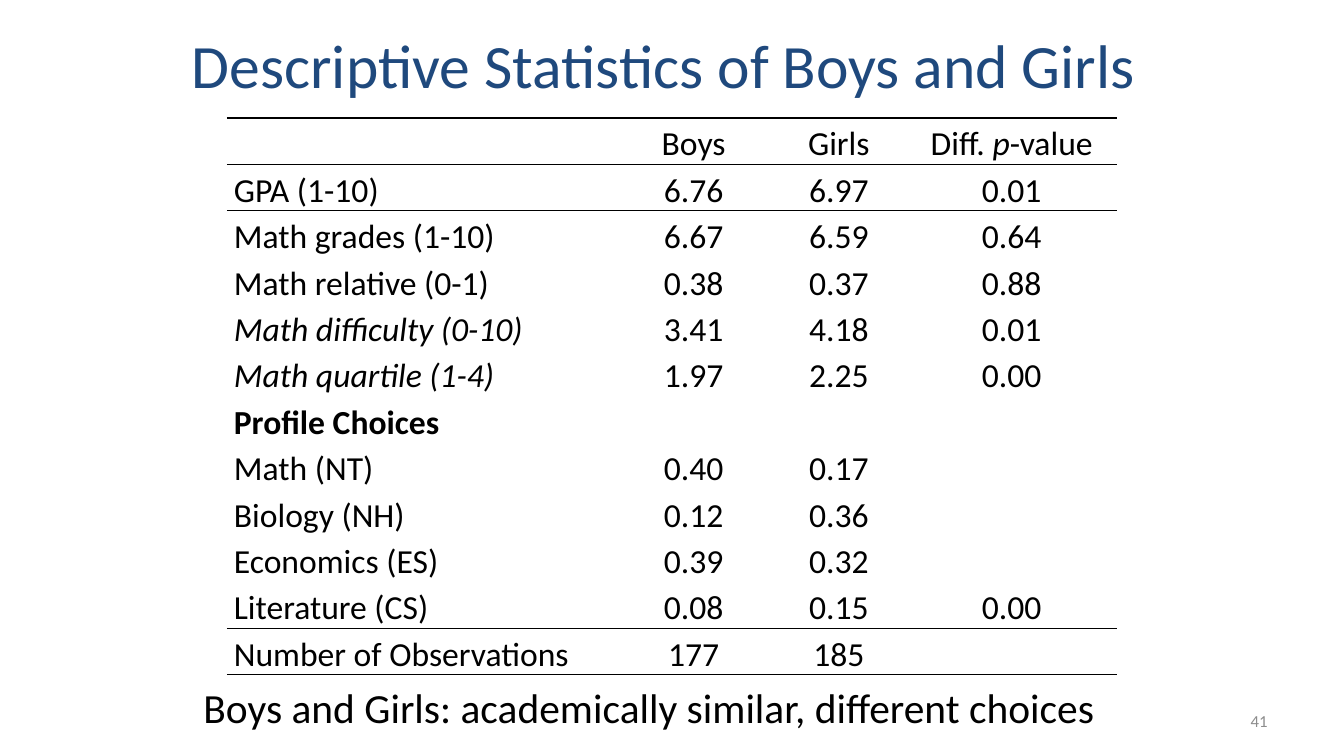
from lxml.etree import SubElement as Sub
from pptx import Presentation
from pptx.dml.color import RGBColor
from pptx.enum.text import MSO_ANCHOR as Anchor, PP_ALIGN as Align
from pptx.oxml.ns import qn
from pptx.util import Inches, Pt

NAVY = RGBColor(0x1F, 0x49, 0x7D)
BLACK = RGBColor(0, 0, 0)
GREY = RGBColor(0x8C, 0x8C, 0x8C)
PLAIN = "{2D5ABB26-0587-4C30-8999-92F81FD0307C}"  # style without grid

deck = Presentation()
deck.slide_width, deck.slide_height = Inches(13.33), Inches(7.5)
slide = deck.slides.add_slide(deck.slide_layouts[6])


def write(frame, text, size=24, color=BLACK, align=Align.LEFT, bold=False,
          slant="", line=None):
    """Fill a frame; the part of the text equal to slant is set in italics."""
    para = frame.paragraphs[0]
    para.alignment = align
    if line:
        para.line_spacing = line
    head, mid, tail = text.partition(slant) if slant else (text, "", "")
    for part in (head, mid, tail):
        if part:
            run = para.add_run()
            run.text = part
            font = run.font
            font.name, font.size, font.bold = "Calibri", Pt(size), bold
            font.italic = part == slant
            font.color.rgb = color


def rule(cell, side):
    """Draw a thin black line on one side of a cell."""
    edge = Sub(cell._tc.get_or_add_tcPr(), qn("a:" + side), w="12700")
    fill = Sub(edge, qn("a:solidFill"))
    Sub(fill, qn("a:srgbClr"), val=str(BLACK))


# Title, closing line and page number
texts = [
    ((1.75, 0.01, 9.67, 1.25), Anchor.MIDDLE,
     "Descriptive Statistics of Boys and Girls",
     dict(size=44, color=NAVY, align=Align.CENTER)),
    ((1.92, 6.72, 9.5, 0.75), Anchor.TOP,
     "Boys and Girls: academically similar, different choices",
     dict(size=29.6)),
    ((9.56, 6.95, 3.11, 0.4), Anchor.MIDDLE, "41",
     dict(size=12, color=GREY, align=Align.RIGHT)),
]
for place, anchor, text, style in texts:
    box = slide.shapes.add_textbox(*map(Inches, place))
    frame = box.text_frame
    frame.word_wrap = True
    frame.vertical_anchor = anchor
    write(frame, text, **style)

# Table of statistics
rows = [
    ("", "Boys", "Girls", "Diff. p-value"),
    ("GPA (1-10)", "6.76", "6.97", "0.01"),
    ("Math grades (1-10)", "6.67", "6.59", "0.64"),
    ("Math relative (0-1)", "0.38", "0.37", "0.88"),
    ("Math difficulty (0-10)", "3.41", "4.18", "0.01"),
    ("Math quartile (1-4)", "1.97", "2.25", "0.00"),
    ("Profile Choices", "", "", ""),
    ("Math (NT)", "0.40", "0.17", ""),
    ("Biology (NH)", "0.12", "0.36", ""),
    ("Economics (ES)", "0.39", "0.32", ""),
    ("Literature (CS)", "0.08", "0.15", "0.00"),
    ("Number of Observations", "177", "185", ""),
]
slants = {"Diff. p-value": "p"}
for row in rows[4:6]:
    slants[row[0]] = row[0]
ruled = (0, len(rows) - 1)  # rows with a line above and below

grid = slide.shapes.add_table(len(rows), 4, Inches(2.25), Inches(1.17),
                              Inches(8.83), Inches(0.42 * len(rows)))
table = grid.table
table.first_row = table.horz_banding = False
table._tbl.tblPr.find(qn("a:tableStyleId")).text = PLAIN
for col, width in zip(table.columns, (3.86, 1.54, 1.34, 2.09)):
    col.width = Inches(width)

for r, row in enumerate(rows):
    table.rows[r].height = Inches(0.42)
    for c, text in enumerate(row):
        cell = table.cell(r, c)
        cell.margin_left = cell.margin_right = Inches(0.07)
        cell.margin_top = cell.margin_bottom = 0
        if r in ruled or r - 1 in ruled:
            rule(cell, "lnT")
        if r in ruled or r + 1 in ruled:
            rule(cell, "lnB")
        cell.fill.background()
        write(cell.text_frame, text, line=1.15,
              align=Align.CENTER if c else Align.LEFT,
              bold=text == "Profile Choices", slant=slants.get(text, ""))

deck.save("out.pptx")
